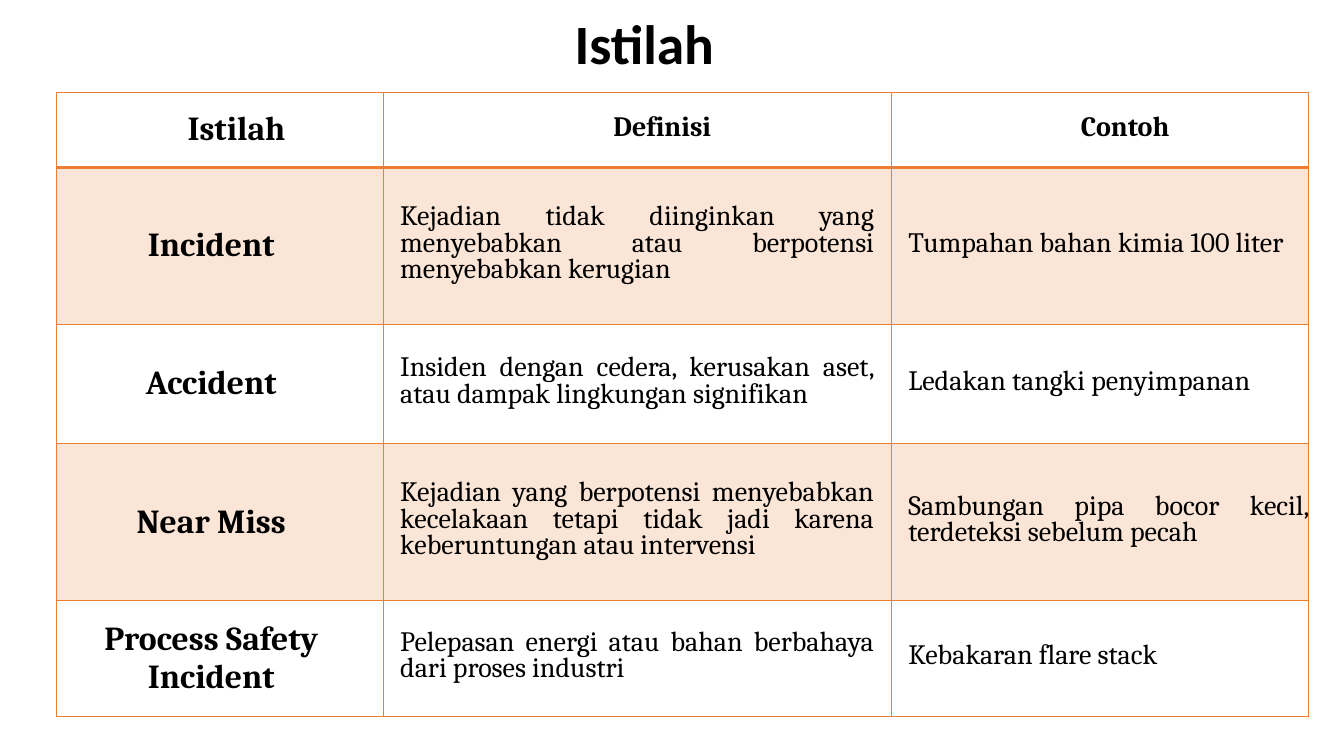
from lxml import etree
from pptx import Presentation
from pptx import util as u
from pptx.dml.color import RGBColor
from pptx.enum import text
from pptx.oxml.ns import qn

TITLE = "Istilah"
HEADER = ("Istilah", "Definisi", "Contoh")
TERMS = [
    ("Incident",
     "Kejadian tidak diinginkan yang menyebabkan atau berpotensi menyebabkan kerugian",
     "Tumpahan bahan kimia 100 liter"),
    ("Accident",
     "Insiden dengan cedera, kerusakan aset, atau dampak lingkungan signifikan",
     "Ledakan tangki penyimpanan"),
    ("Near Miss",
     "Kejadian yang berpotensi menyebabkan kecelakaan tetapi tidak jadi karena "
     "keberuntungan atau intervensi",
     "Sambungan pipa bocor kecil, terdeteksi sebelum pecah"),
    ("Process Safety Incident",
     "Pelepasan energi atau bahan berbahaya dari proses industri",
     "Kebakaran flare stack"),
]
COLUMNS = (3.24, 5.04, 4.14)
ROWS = (0.74, 1.56, 1.18, 1.56, 1.15)
SIDE_INSET, END_INSET = 0.17, 0.1

BLACK = RGBColor(0, 0, 0)
ORANGE = RGBColor(0xED, 0x7D, 0x31)
PEACH = RGBColor(0xFB, 0xE5, 0xD6)


def set_font(paragraph, name, size, bold):
    for run in paragraph.runs:
        run.font.name = name
        run.font.size = u.Pt(size)
        run.font.bold = bold
        run.font.color.rgb = BLACK


def add_borders(cell, row):
    """Draw the orange grid, with a heavier rule below the header."""
    widths = {"a:lnL": 1, "a:lnR": 1,
              "a:lnT": 2 if row == 1 else 1, "a:lnB": 2 if row == 0 else 1}
    properties = cell._tc.get_or_add_tcPr()
    for side, width in widths.items():
        line = etree.SubElement(properties, qn(side), w=str(u.Pt(width)))
        solid = etree.SubElement(line, qn("a:solidFill"))
        etree.SubElement(solid, qn("a:srgbClr"), val=str(ORANGE))


def fill_cell(cell, words, row, column):
    header, term = row == 0, column == 0
    cell.vertical_anchor = text.MSO_ANCHOR.MIDDLE
    cell.margin_left = u.Inches(0 if term else SIDE_INSET)
    cell.margin_right = u.Inches(0 if column == 2 and not header else SIDE_INSET)
    cell.margin_top = cell.margin_bottom = u.Inches(END_INSET)
    add_borders(cell, row)
    if row % 2:
        cell.fill.solid()
        cell.fill.fore_color.rgb = PEACH
    else:
        cell.fill.background()

    cell.text_frame.text = words
    paragraph = cell.text_frame.paragraphs[0]
    centred = header or term
    paragraph.alignment = text.PP_ALIGN.CENTER if centred else text.PP_ALIGN.JUSTIFY
    paragraph.space_after = u.Pt(8)
    if not term:
        paragraph.line_spacing = u.Pt(18.8)
    if header:
        paragraph.level = 1
        paragraph._p.get_or_add_pPr().set("marL", str(u.Inches(0.5)))
    set_font(paragraph, "Cambria", 24 if term else 20, centred)


def main():
    deck = Presentation()
    deck.slide_width, deck.slide_height = u.Inches(13.33), u.Inches(7.5)
    slide = deck.slides.add_slide(deck.slide_layouts[5])

    title = slide.shapes.title
    title.left, title.top = u.Inches(0.64), u.Inches(0.28)
    title.width, title.height = u.Inches(11.5), u.Inches(0.37)
    title.text_frame.text = TITLE
    title.text_frame.auto_size = text.MSO_AUTO_SIZE.NONE
    title.text_frame.vertical_anchor = text.MSO_ANCHOR.MIDDLE
    heading = title.text_frame.paragraphs[0]
    heading.alignment = text.PP_ALIGN.CENTER
    heading.line_spacing = 0.9
    set_font(heading, "Calibri", 39.6, True)

    glossary = slide.shapes.add_table(
        len(ROWS), len(COLUMNS), u.Inches(0.56), u.Inches(0.92),
        u.Inches(sum(COLUMNS)), u.Inches(sum(ROWS))).table
    glossary.first_row = glossary.horz_banding = False
    for column, width in zip(glossary.columns, COLUMNS):
        column.width = u.Inches(width)
    for row, height in zip(glossary.rows, ROWS):
        row.height = u.Inches(height)
    for row, entry in enumerate([HEADER, *TERMS]):
        for column, words in enumerate(entry):
            fill_cell(glossary.cell(row, column), words, row, column)

    deck.save("out.pptx")


if __name__ == "__main__":
    main()
